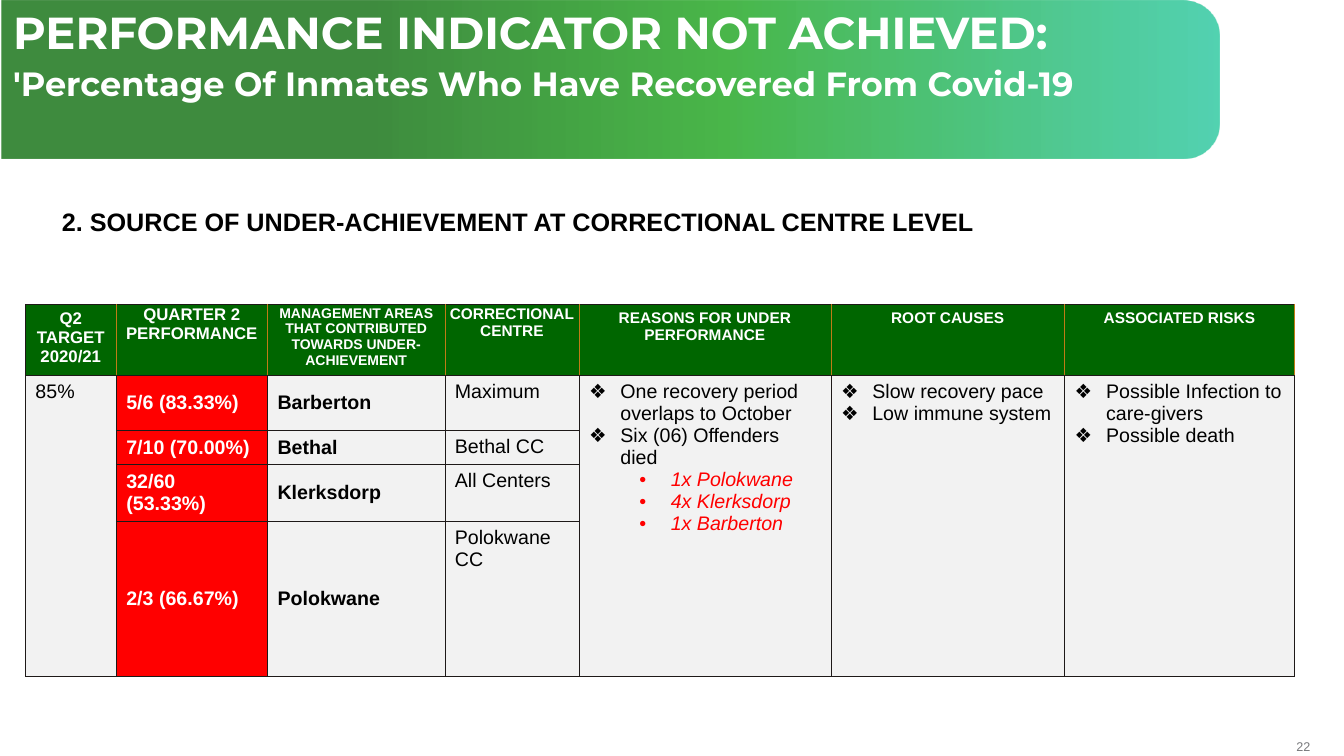
import pptx
import pptx.dml.color
import pptx.enum.shapes
import pptx.enum.text
import pptx.oxml.ns
import pptx.util
from lxml import etree

Cm = pptx.util.Cm
qn = pptx.oxml.ns.qn
ALIGN = pptx.enum.text.PP_ALIGN
ANCHOR = pptx.enum.text.MSO_ANCHOR
COLORS = {
    "dark green": "006600", "mid green": "009900", "teal": "00BC8D",
    "white": "FFFFFF", "black": "000000", "red": "FF0000",
    "pale grey": "F2F2F2", "page grey": "77787B",
    "line": "1E1918", "header line": "BF7B17",
}


def write(frame, text, size=14, color="black", bold=False, italic=False, font="Arial",
          align=ALIGN.LEFT, anchor=ANCHOR.TOP, margins=None, bullet=None, indent=0,
          level=0, spacing=None, after=None, append=False):
    """Write one paragraph per line of text; a vertical tab breaks a line."""
    frame.word_wrap = True
    frame.vertical_anchor = anchor
    if margins:
        (frame.margin_left, frame.margin_top,
         frame.margin_right, frame.margin_bottom) = [Cm(m) for m in margins]
    for number, line in enumerate(text.split("\n")):
        para = frame.add_paragraph() if append or number else frame.paragraphs[0]
        para.text = line
        para.alignment = align
        para.level = level
        if spacing:
            para.line_spacing = spacing
        if after:
            para.space_after = pptx.util.Pt(after)
        props = para._p.get_or_add_pPr()
        if indent:
            props.set("marL", str(Cm(indent)))
        if bullet:
            props.set("indent", str(Cm(-0.79)))
            etree.SubElement(props, qn("a:buFont"), typeface="Arial")
            etree.SubElement(props, qn("a:buChar"), char=bullet)
        for span in para.runs:
            span.font.name = font
            span.font.size = pptx.util.Pt(size)
            span.font.bold = bold
            span.font.italic = italic
            span.font.color.rgb = pptx.dml.color.RGBColor.from_string(COLORS[color])


def paint_cell(cell, fill, sides):
    """Fill a cell and draw its borders, given as four colour names: left, right, top, bottom."""
    cell.fill.solid()
    cell.fill.fore_color.rgb = pptx.dml.color.RGBColor.from_string(COLORS[fill])
    props = cell._tc.get_or_add_tcPr()
    for place, (side, color) in enumerate(zip("LRTB", sides)):
        border = etree.Element(qn(f"a:ln{side}"), w=str(pptx.util.Pt(0.5)))
        solid = etree.SubElement(border, qn("a:solidFill"))
        etree.SubElement(solid, qn("a:srgbClr"), val=COLORS[color])
        props.insert(place, border)


deck = pptx.Presentation()
deck.slide_width, deck.slide_height = Cm(33.87), Cm(19.05)
page = deck.slides.add_slide(deck.slide_layouts[6])

# Page number
box = page.shapes.add_textbox(Cm(32.03), Cm(18.62), Cm(0.99), Cm(0.38))
write(box.text_frame, "22", size=9, color="page grey", align=ALIGN.RIGHT,
      anchor=ANCHOR.MIDDLE, margins=(0, 0, 0, 0))

# Banner, turned so that its rounded end points right
banner = page.shapes.add_shape(pptx.enum.shapes.MSO_SHAPE.ROUND_2_SAME_RECTANGLE,
                               Cm(13.39), Cm(-13.34), Cm(3.99), Cm(30.68))
banner.rotation = 90
banner.adjustments[0] = 0.23
banner.shadow.inherit = False
banner.line.fill.background()
banner.fill.gradient()
banner.fill.gradient_angle = 90
stops = banner._element.spPr.find(qn("a:gradFill")).find(qn("a:gsLst"))
for stop in list(stops):
    stops.remove(stop)
for position, color, opacity in [(30, "dark green", 75), (59, "mid green", 71), (100, "teal", 67)]:
    stop = etree.SubElement(stops, qn("a:gs"), pos=str(position * 1000))
    tint = etree.SubElement(stop, qn("a:srgbClr"), val=COLORS[color])
    etree.SubElement(tint, qn("a:alpha"), val=str(opacity * 1000))

# Section heading
box = page.shapes.add_textbox(Cm(0.43), Cm(5.08), Cm(25.4), Cm(1.02))
write(box.text_frame, "2. SOURCE OF UNDER-ACHIEVEMENT AT CORRECTIONAL CENTRE LEVEL",
      size=18, bold=True, indent=0.88)

# Table
widths = [2.29, 3.81, 4.47, 3.38, 6.35, 5.89, 5.79]
heights = [1.55, 1.4, 0.81, 0.81, 3.89]
table = page.shapes.add_table(len(heights), len(widths), Cm(0.64), Cm(7.67),
                              Cm(sum(widths)), Cm(sum(heights))).table
table.first_row = table.horz_banding = False
for column, width in zip(table.columns, widths):
    column.width = Cm(width)
for row, height in zip(table.rows, heights):
    row.height = Cm(height)

tight, roomy = (0.03, 0.03, 0.03, 0), (0.25, 0.13, 0.25, 0.13)
headers = [
    ("Q2 TARGET 2020/21", 12, roomy),
    ("QUARTER 2\vPERFORMANCE", 12, tight),
    ("MANAGEMENT AREAS THAT CONTRIBUTED TOWARDS UNDER-ACHIEVEMENT", 10, tight),
    ("CORRECTIONAL CENTRE", 11, tight),
    ("REASONS FOR UNDER\nPERFORMANCE", 11, roomy),
    ("ROOT CAUSES", 11, roomy),
    ("ASSOCIATED RISKS", 11, roomy),
]
for column, (text, size, margins) in enumerate(headers):
    cell = table.cell(0, column)
    left = "header line" if column else "line"
    paint_cell(cell, "dark green", [left, "header line", "line", "line"])
    write(cell.text_frame, text, size=size, color="white", bold=True, align=ALIGN.CENTER)
    (cell.margin_left, cell.margin_top,
     cell.margin_right, cell.margin_bottom) = [Cm(m) for m in margins]

for row in range(1, len(heights)):
    for column in range(len(widths)):
        paint_cell(table.cell(row, column), "red" if column == 1 else "pale grey", ["line"] * 4)

areas = [
    ("5/6 (83.33%)", "Barberton", "Maximum"),
    ("7/10 (70.00%)", "Bethal", "Bethal CC"),
    ("32/60 (53.33%)", "Klerksdorp", "All Centers"),
    ("2/3 (66.67%)", "Polokwane", "Polokwane CC"),
]
for row, (performance, area, centre) in enumerate(areas, 1):
    write(table.cell(row, 1).text_frame, performance, color="white", bold=True)
    write(table.cell(row, 2).text_frame, area, bold=True)
    write(table.cell(row, 3).text_frame, centre)
    for column in (1, 2):
        table.cell(row, column).vertical_anchor = ANCHOR.MIDDLE

for column in (0, 4, 5, 6):
    table.cell(1, column).merge(table.cell(4, column))
write(table.cell(1, 0).text_frame, "85%")
points = {
    4: "One recovery period overlaps to October\nSix (06) Offenders died",
    5: "Slow recovery pace\nLow immune system",
    6: "Possible Infection to care-givers\nPossible death",
}
for column, text in points.items():
    write(table.cell(1, column).text_frame, text, bullet="❖", indent=0.79)
write(table.cell(1, 4).text_frame, "1x Polokwane\n4x Klerksdorp\n1x Barberton", color="red",
      italic=True, bullet="•", indent=2.06, level=1, append=True)

# Title
box = page.shapes.add_textbox(Cm(0.08), Cm(0.15), Cm(30.43), Cm(1.45))
title = {"font": "Montserrat", "color": "white", "bold": True, "spacing": 0.9, "after": 6}
write(box.text_frame, "PERFORMANCE INDICATOR NOT ACHIEVED:", size=32, **title)
write(box.text_frame, "'Percentage Of Inmates Who Have Recovered From Covid-19",
      size=24, append=True, **title)

deck.save("out.pptx")
